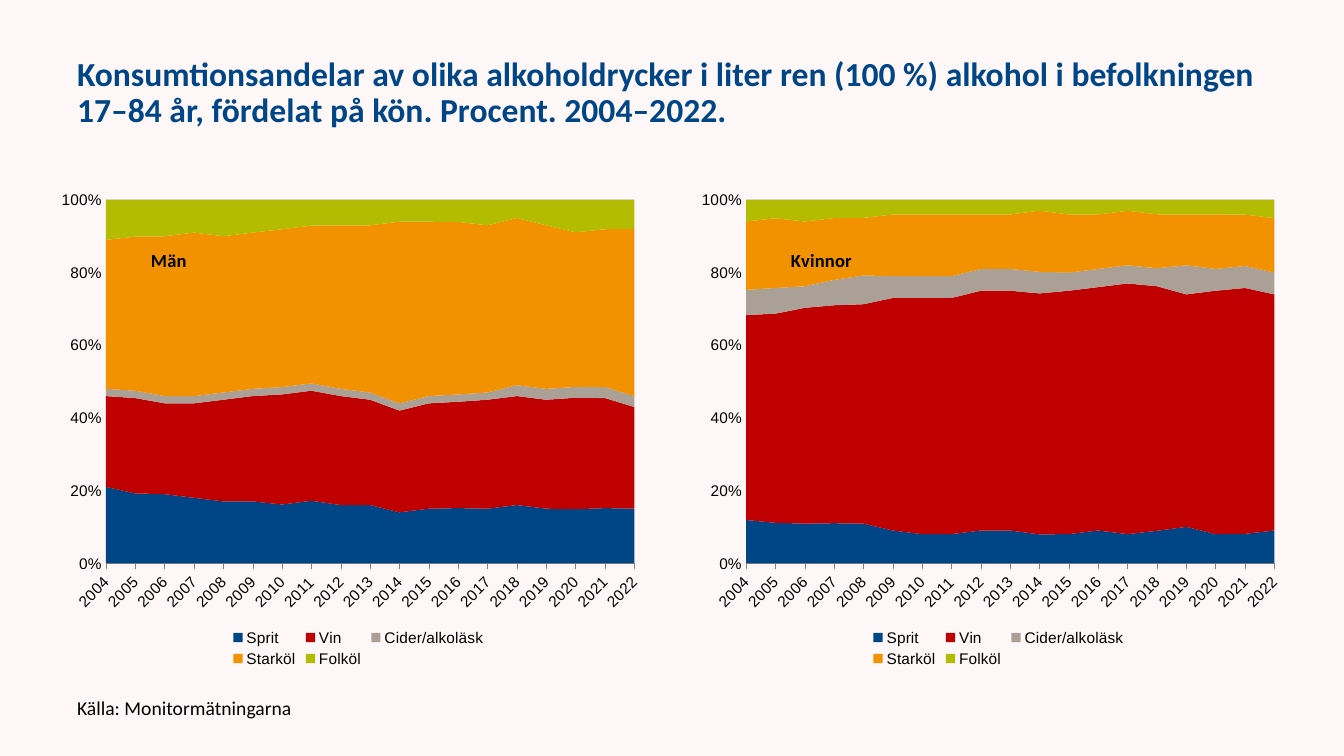
from lxml import etree
from pptx import Presentation
from pptx.chart import data as cd
from pptx.dml.color import RGBColor
from pptx.enum import chart as ch, text
from pptx.oxml.ns import qn
from pptx.util import Pt

TITLE = ("Konsumtionsandelar av olika alkoholdrycker i liter ren (100 %) alkohol "
         "i befolkningen 17–84 år, fördelat på kön. Procent. 2004–2022.")
SOURCE = "Källa: Monitormätningarna"
YEARS = [str(year) for year in range(2004, 2023)]
COLORS = {"Sprit": "004687", "Vin": "C00000", "Cider/alkoläsk": "AAA096",
          "Starköl": "F29200", "Folköl": "B3BC00"}
SHARES = {
    "Män": [
        [21, 19, 19, 18, 17, 17, 16, 17, 16, 16, 14, 15, 15, 15, 16, 15, 15, 15, 15],
        [25, 26, 25, 26, 28, 29, 30, 30, 30, 29, 28, 29, 29, 30, 30, 30, 31, 30, 28],
        [2, 2, 2, 2, 2, 2, 2, 2, 2, 2, 2, 2, 2, 2, 3, 3, 3, 3, 3],
        [41, 42, 44, 45, 43, 43, 43, 43, 45, 46, 50, 48, 47, 46, 46, 45, 43, 43, 46],
        [11, 10, 10, 9, 10, 9, 8, 7, 7, 7, 6, 6, 6, 7, 5, 7, 9, 8, 8],
    ],
    "Kvinnor": [
        [12, 11, 11, 11, 11, 9, 8, 8, 9, 9, 8, 8, 9, 8, 9, 10, 8, 8, 9],
        [57, 57, 60, 60, 61, 64, 65, 65, 66, 66, 67, 67, 67, 69, 68, 64, 67, 67, 65],
        [7, 7, 6, 7, 8, 6, 6, 6, 6, 6, 6, 5, 5, 5, 5, 8, 6, 6, 6],
        [19, 19, 18, 17, 16, 17, 17, 17, 15, 15, 17, 16, 15, 15, 15, 14, 15, 14, 15],
        [6, 5, 6, 5, 5, 4, 4, 4, 4, 4, 3, 4, 4, 3, 4, 4, 4, 4, 5],
    ],
}
LEFT, TOP, WIDTH, HEIGHT, STEP = 34.5, 121, 443, 358, 457.2
PLOT = {"x": 0.093, "y": 0.061, "w": 0.852, "h": 0.725}
LEGEND = {"x": 0.29, "y": 0.91, "w": 0.42, "h": 0.09}
LABEL = {"x": 0.16, "y": 0.15}


def rgb(value):
    return RGBColor.from_string(value)


def set_font(font, color="000000", **formats):
    for name, value in formats.items():
        setattr(font, name, value)
    font.color.rgb = rgb(color)


def set_line(line, color, width):
    line.color.rgb = rgb(color)
    line.width = Pt(width)


def place(parent, box, inner=False):
    for old in parent.findall(qn("c:layout")):
        parent.remove(old)
    layout = etree.Element(qn("c:layout"))
    manual = etree.SubElement(layout, qn("c:manualLayout"))
    settings = {"layoutTarget": "inner"} if inner else {}
    settings.update(xMode="edge", yMode="edge", **box)
    for name, value in settings.items():
        etree.SubElement(manual, qn("c:" + name)).set("val", str(value))
    overlay = parent.find(qn("c:overlay"))
    if overlay is None:
        parent.insert(0, layout)
    else:
        overlay.addprevious(layout)


def add_text(slide, box, words, **formats):
    tf = slide.shapes.add_textbox(*map(Pt, box)).text_frame
    tf.word_wrap = True
    tf.vertical_anchor = text.MSO_ANCHOR.MIDDLE
    p = tf.paragraphs[0]
    p.line_spacing = 0.9
    r = p.add_run()
    r.text = words
    set_font(r.font, name="Calibri", **formats)


def add_shares(slide, left, label, rows):
    data = cd.CategoryChartData(number_format="0")
    data.categories = YEARS
    for name, row in zip(COLORS, rows):
        data.add_series(name, row)
    chart = slide.shapes.add_chart(ch.XL_CHART_TYPE.AREA_STACKED_100, Pt(left), Pt(TOP),
                                   Pt(WIDTH), Pt(HEIGHT), data).chart
    set_font(chart.font, name="Arial", size=Pt(11))
    for series in chart.plots[0].series:
        series.format.fill.solid()
        series.format.fill.fore_color.rgb = rgb(COLORS[series.name])

    for axis, tick in ((chart.category_axis, ch.XL_TICK_MARK.OUTSIDE),
                       (chart.value_axis, ch.XL_TICK_MARK.NONE)):
        axis.major_tick_mark = tick
        axis.minor_tick_mark = ch.XL_TICK_MARK.NONE
        set_font(axis.tick_labels.font, name="Arial", size=Pt(11))
        set_line(axis.format.line, "808080", 0.25)
    body = chart.category_axis._element.find(qn("c:txPr")).find(qn("a:bodyPr"))
    body.set("rot", "-2700000")
    body.set("vert", "horz")
    values = chart.value_axis
    values.major_unit = 0.2
    values.has_major_gridlines = True
    set_line(values.major_gridlines.format.line, "D9D9D9", 0.75)
    values.tick_labels.number_format = "0%"
    values.tick_labels.number_format_is_linked = False
    for cross in values._element.findall(qn("c:crossBetween")):
        cross.set("val", "midCat")

    chart.has_title = True
    r = chart.chart_title.text_frame.paragraphs[0].add_run()
    r.text = label
    set_font(r.font, name="Calibri", size=Pt(13.2), bold=True)
    chart.has_legend = True
    chart.legend.position = ch.XL_LEGEND_POSITION.BOTTOM
    chart.legend.include_in_layout = False
    set_font(chart.legend.font, name="Arial", size=Pt(11))
    place(chart.chart_title._element, LABEL)
    place(chart.legend._element, LEGEND)
    place(chart._chartSpace.chart.plotArea, PLOT, inner=True)


def main():
    prs = Presentation()
    prs.slide_width, prs.slide_height = Pt(960), Pt(540)
    slide = prs.slides.add_slide(prs.slide_layouts[6])
    slide.background.fill.solid()
    slide.background.fill.fore_color.rgb = rgb("FEF7F7")
    add_text(slide, (48, 21.6, 864, 90), TITLE, color="004687", size=Pt(24), bold=True)
    for i, (label, rows) in enumerate(SHARES.items()):
        add_shares(slide, LEFT + i * STEP, label, rows)
    add_text(slide, (48, 493, 432, 27), SOURCE, size=Pt(14))
    prs.save("out.pptx")


if __name__ == "__main__":
    main()
